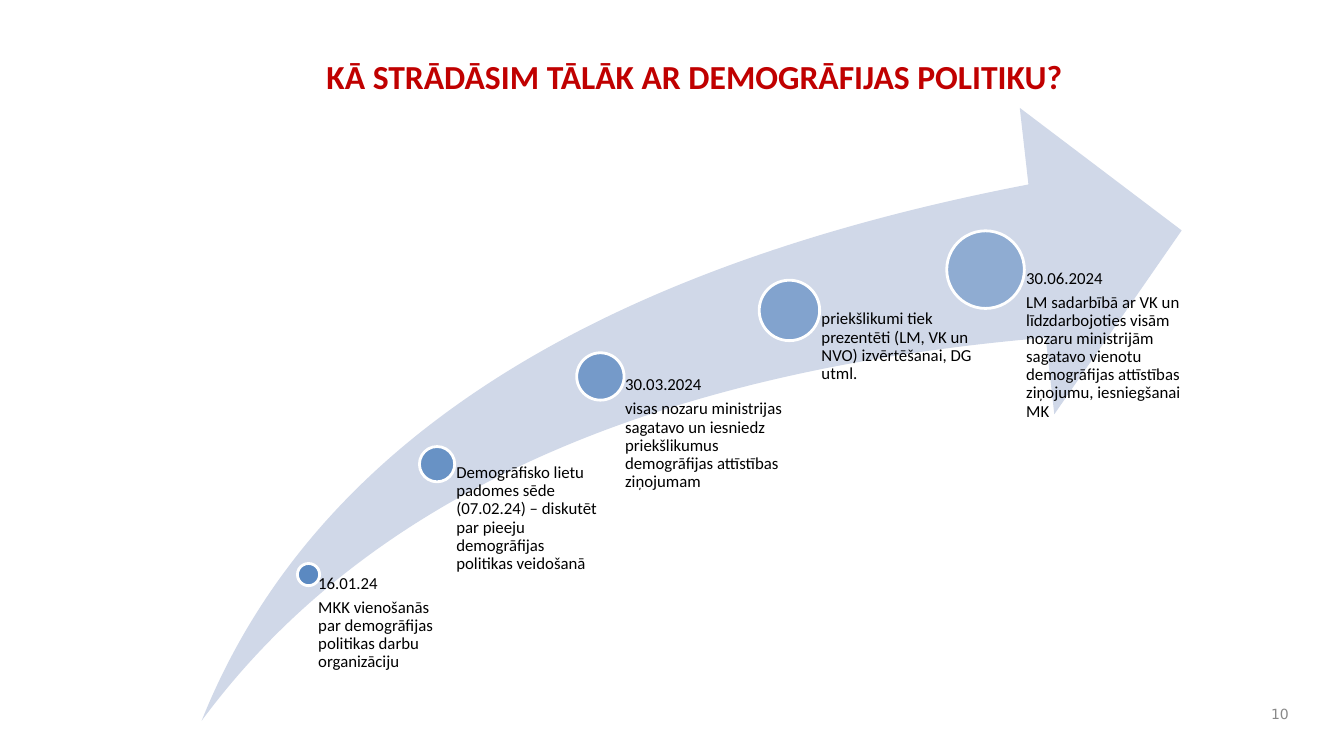
"""Build the demography policy roadmap slide."""
import pptx
import pptx.util
import pptx.dml.color
import pptx.enum.shapes
import pptx.enum.text
import pptx.oxml

Inches, Pt = pptx.util.Inches, pptx.util.Pt
SHAPE = pptx.enum.shapes.MSO_SHAPE
ALIGN = pptx.enum.text.PP_ALIGN
ANCHOR = pptx.enum.text.MSO_ANCHOR

TITLE = "KĀ STRĀDĀSIM TĀLĀK AR DEMOGRĀFIJAS POLITIKU?"
PAGE = "10"
BASE = 7.15
# dot left, dot top, dot size, text left, text width, lines
STEPS = [
    (2.95, 5.59, 0.22, 3.04, 1.33,
     ["16.01.24",
      "MKK vienošanās par demogrāfijas politikas darbu organizāciju"]),
    (4.16, 4.43, 0.35, 4.34, 1.61,
     ["Demogrāfisko lietu padomes sēde (07.02.24) – diskutēt par pieeju "
      "demogrāfijas politikas veidošanā"]),
    (5.72, 3.5, 0.47, 5.95, 1.88,
     ["30.03.2024",
      "visas nozaru ministrijas sagatavo un iesniedz priekšlikumus "
      "demogrāfijas attīstības ziņojumam"]),
    (7.53, 2.78, 0.6, 7.83, 1.94,
     ["priekšlikumi tiek prezentēti (LM, VK un NVO) izvērtēšanai, DG utml."]),
    (9.39, 2.29, 0.77, 9.77, 1.94,
     ["30.06.2024",
      "LM sadarbībā ar VK un līdzdarbojoties visām nozaru ministrijām "
      "sagatavo vienotu demogrāfijas attīstības ziņojumu, iesniegšanai MK"]),
]


def paint(color, code):
    color.rgb = pptx.dml.color.RGBColor.from_string(code)


def draw(slide, kind, box, code):
    shape = slide.shapes.add_shape(kind, *map(Inches, box))
    shape.shadow.inherit = False
    shape.fill.solid()
    paint(shape.fill.fore_color, code)
    shape.line.fill.background()
    return shape


def fade(shape, share):
    node = shape.fill._xPr.solidFill[0]
    alpha = pptx.oxml.xmlchemy.OxmlElement("a:alpha")
    alpha.set("val", str(share * 1000))
    node.append(alpha)


def write(slide, box, lines, size, code, pads, font="Calibri", bold=False):
    frame = slide.shapes.add_textbox(*map(Inches, box)).text_frame
    frame.word_wrap = True
    (frame.margin_left, frame.margin_top,
     frame.margin_right, frame.margin_bottom) = map(Inches, pads)
    frame.text = "\n".join(lines)
    for par in frame.paragraphs:
        for run in par.runs:
            run.font.size = Pt(size)
            run.font.name = font
            run.font.bold = bold
            paint(run.font.color, code)
    return frame


def main():
    deck = pptx.Presentation()
    deck.slide_width, deck.slide_height = Inches(13.33), Inches(7.5)
    slide = deck.slides.add_slide(deck.slide_layouts[6])

    arrow = draw(slide, SHAPE.SWOOSH_ARROW, (2, 1.07, 9.72, 6.08), "D0D8E8")
    arrow.adjustments[0] = arrow.adjustments[1] = 0.25

    for rank, (left, top, size, start, width, lines) in enumerate(STEPS):
        dot = draw(slide, SHAPE.OVAL, (left, top, size, size), "4F81BD")
        fade(dot, 90 - 10 * rank)
        paint(dot.line.color, "FFFFFF")
        dot.line.width = Pt(2)
        mid = top + size / 2
        frame = write(slide, (start, mid, width, BASE - mid), lines, 12,
                      "000000", (0.53 * size, 0, 0, 0))
        for par in frame.paragraphs:
            par.line_spacing = 0.9
            par.space_after = Pt(4.2)

    pads = (0.1, 0.05, 0.1, 0.05)
    write(slide, (3.14, 0.51, 7.6, 1.13), [TITLE], 24, "C00000", pads,
          bold=True)
    page = write(slide, (12.44, 6.92, 0.44, 0.33), [PAGE], 10, "898989", pads,
                 font="DejaVu Sans")
    page.vertical_anchor = ANCHOR.MIDDLE
    page.paragraphs[0].alignment = ALIGN.RIGHT

    deck.save("out.pptx")


if __name__ == "__main__":
    main()
